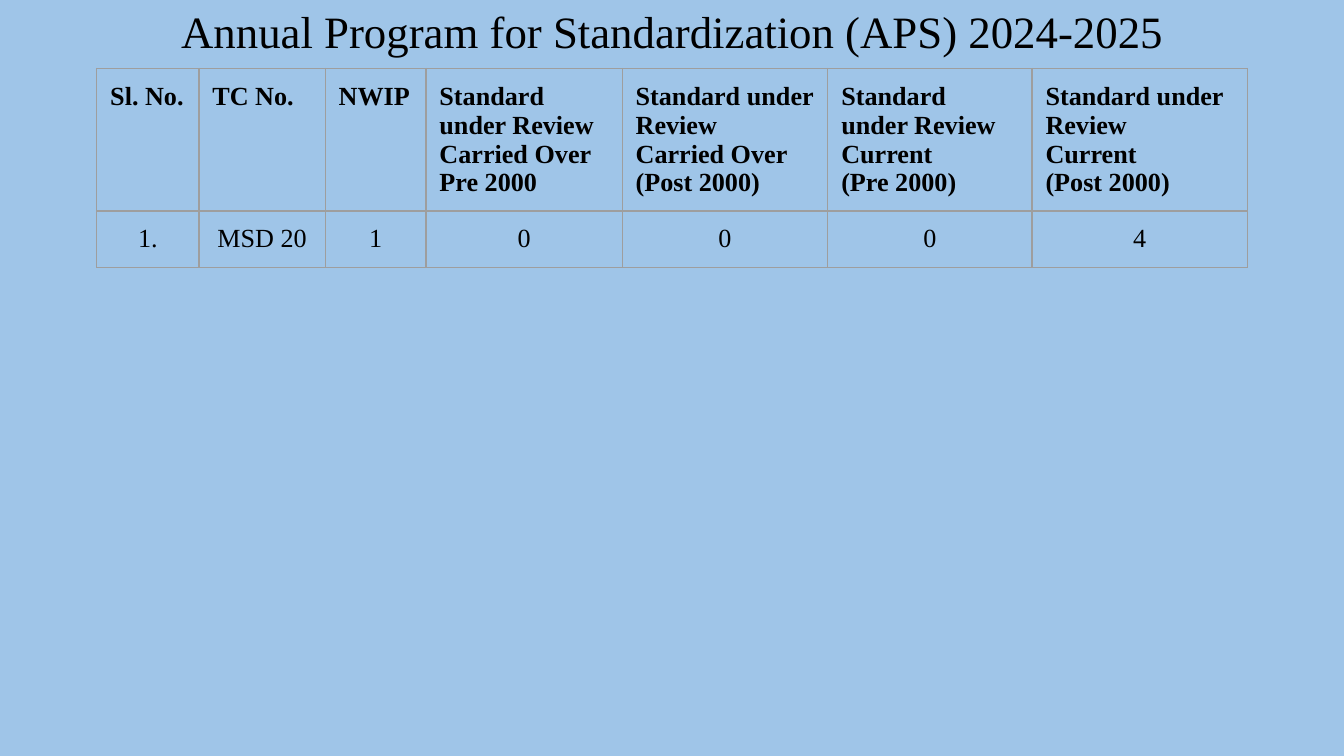
"""Build the annual standardization program slide with its summary table."""
from dataclasses import dataclass

from lxml.etree import fromstring
from pptx import Presentation
from pptx.dml.color import RGBColor
from pptx.enum.text import MSO_ANCHOR, PP_ALIGN
from pptx.oxml.ns import nsdecls
from pptx.util import Inches, Pt


@dataclass(frozen=True)
class Theme:
    font: str = "Times New Roman"
    background: str = "9FC5E8"
    text: str = "000000"
    border: str = "9E9E9E"
    title_size: float = 24
    table_size: float = 14
    border_width: float = 0.75


theme = Theme()


def format_paragraph(para, size, bold, alignment):
    para.alignment = alignment
    for span in para.runs:
        span.font.name = theme.font
        span.font.size = Pt(size)
        span.font.bold = bold
        span.font.color.rgb = RGBColor.from_string(theme.text)


def add_borders(cell):
    properties = cell._tc.get_or_add_tcPr()
    for side in "LRTB":
        properties.append(fromstring(
            f'<a:ln{side} {nsdecls("a")} w="{Pt(theme.border_width)}">'
            f'<a:solidFill><a:srgbClr val="{theme.border}"/></a:solidFill></a:ln{side}>'
        ))


review = "Standard under Review"
headers = ["Sl. No.", "TC No.", "NWIP"] + [
    f"{review}\n{status}\n{period}"
    for status, period in [
        ("Carried Over", "Pre 2000"),
        ("Carried Over", "(Post 2000)"),
        ("Current", "(Pre 2000)"),
        ("Current", "(Post 2000)"),
    ]
]
rows = [headers, ["1.", "MSD 20", "1", "0", "0", "0", "4"]]
column_widths = [0.76, 0.94, 0.75, 1.46, 1.53, 1.52, 1.6]
row_height = 0.42

deck = Presentation()
deck.slide_width = Inches(10)
deck.slide_height = Inches(10 * 9 / 16)
slide = deck.slides.add_slide(deck.slide_layouts[5])
slide.background.fill.solid()
slide.background.fill.fore_color.rgb = RGBColor.from_string(theme.background)

title = slide.shapes.title
title.left, title.top = Inches(0.72), Inches(0)
title.width, title.height = Inches(8.56), Inches(0.51)
frame = title.text_frame
frame.text = "Annual Program for Standardization (APS) 2024-2025"
frame.word_wrap = True
frame.vertical_anchor = MSO_ANCHOR.MIDDLE
frame.margin_left = frame.margin_right = Inches(0.07)
frame.margin_top = frame.margin_bottom = Inches(0.04)
frame.paragraphs[0].line_spacing = 0.9
format_paragraph(frame.paragraphs[0], theme.title_size, False, PP_ALIGN.CENTER)

table = slide.shapes.add_table(
    len(rows), len(headers), Inches(0.72), Inches(0.51),
    Inches(sum(column_widths)), Inches(row_height * len(rows)),
).table
table.first_row = False
table.horz_banding = False
for column, width in zip(table.columns, column_widths):
    column.width = Inches(width)

for row_index, values in enumerate(rows):
    table.rows[row_index].height = Inches(row_height)
    is_header = row_index == 0
    alignment = PP_ALIGN.LEFT if is_header else PP_ALIGN.CENTER
    for column_index, value in enumerate(values):
        cell = table.cell(row_index, column_index)
        cell.text_frame.text = value
        cell.vertical_anchor = MSO_ANCHOR.TOP
        cell.margin_left = cell.margin_right = Inches(0.1)
        cell.margin_top = cell.margin_bottom = Inches(0.1)
        add_borders(cell)
        cell.fill.background()
        for para in cell.text_frame.paragraphs:
            format_paragraph(para, theme.table_size, is_header, alignment)

deck.save("out.pptx")
